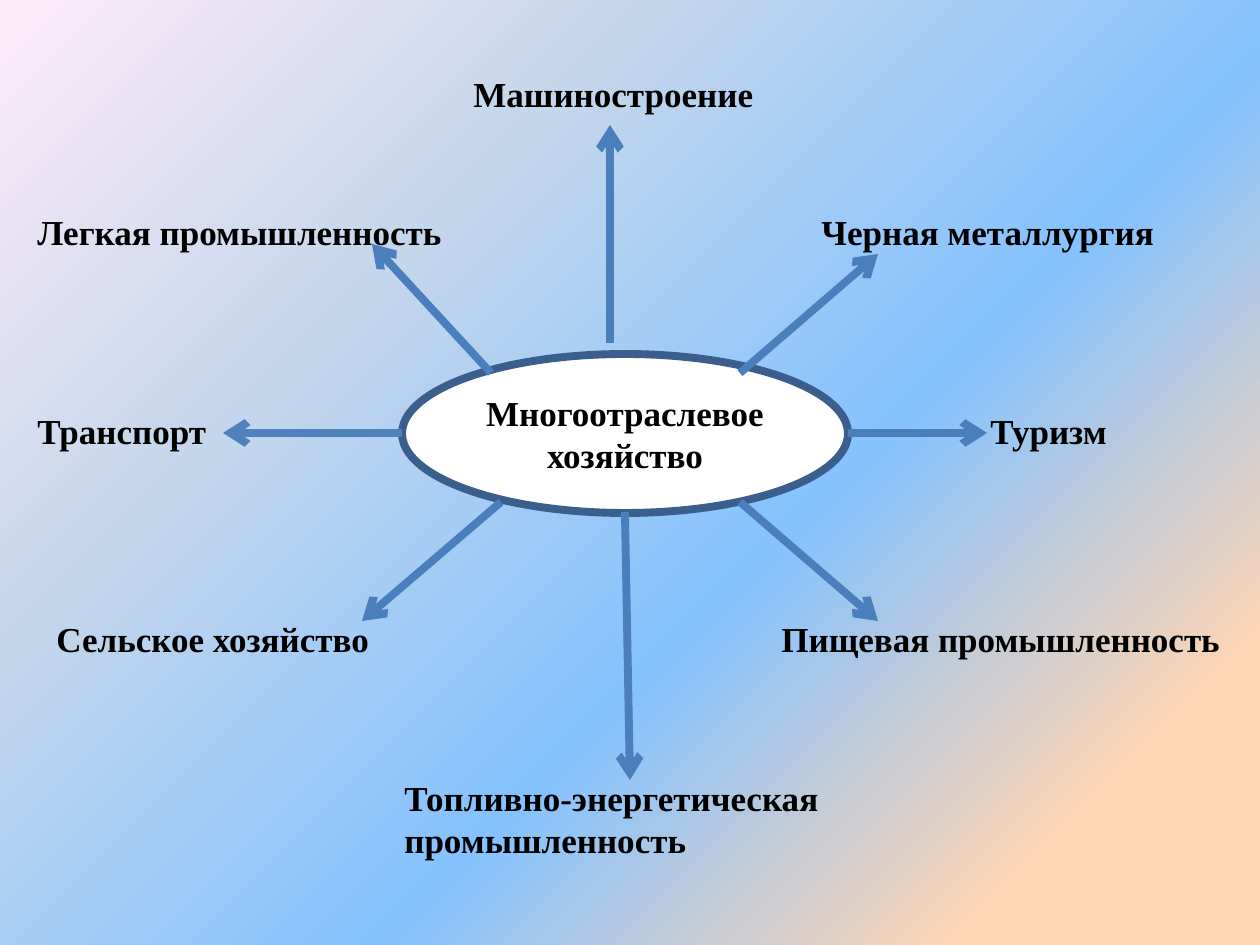
import pptx
import pptx.util
import pptx.oxml
import pptx.oxml.ns
from pptx.dml.color import RGBColor
from pptx.enum.shapes import MSO_CONNECTOR, MSO_SHAPE
from pptx.enum.text import MSO_ANCHOR, MSO_AUTO_SIZE, PP_ALIGN

PX = 914400 // 126
FONT = "Times New Roman"
BLACK = RGBColor(0x00, 0x00, 0x00)
WHITE = RGBColor(0xFF, 0xFF, 0xFF)
OUTLINE = RGBColor(0x3A, 0x5F, 0x8C)
BLUE = RGBColor(0x4B, 0x7E, 0xBC)
LIGHT_BLUE = RGBColor(0x4F, 0x81, 0xBD)
PEACH = RGBColor(0xFC, 0xD5, 0xB5)
SKY = RGBColor(0x85, 0xC2, 0xFF)
PALE_BLUE = RGBColor(0xC4, 0xD6, 0xEB)
PINK = RGBColor(0xFF, 0xEB, 0xFA)

BACKGROUND_STOPS = [(14, PEACH), (40, SKY), (70, PALE_BLUE), (100, PINK)]

# start x, start y, end x, end y, colour
ARROWS = [
    (740, 373, 878, 254, BLUE),
    (610, 343, 610, 125, BLUE),
    (848, 433, 987, 433, BLUE),
    (491, 373, 372, 244, BLUE),
    (740, 502, 878, 621, BLUE),
    (402, 433, 223, 433, LIGHT_BLUE),
    (501, 502, 362, 621, BLUE),
    (625, 512, 630, 780, BLUE),
]

# text, left, top, width, height, wrap
BRANCHES = [
    ("Машиностроение", 461, 66, 316, 55, False),
    ("Топливно-энергетическая промышленность", 392, 770, 630, 97, True),
    ("Черная металлургия", 809, 204, 387, 55, True),
    ("Легкая промышленность", 25, 204, 433, 55, False),
    ("Пищевая промышленность", 769, 611, 467, 55, False),
    ("Сельское хозяйство", 44, 611, 340, 55, False),
    ("Транспорт", 25, 403, 218, 55, True),
    ("Туризм", 978, 403, 208, 55, True),
]


def px(*lengths):
    return [pptx.util.Emu(n * PX) for n in lengths]


def set_background(s, stops):
    """Fill the background with a gradient that spreads from the bottom right corner."""
    s.background.fill.solid()
    solid = s.element.find(".//" + pptx.oxml.ns.qn("p:bgPr"))[0]
    gs = "".join(
        f'<a:gs pos="{pos * 1000}"><a:srgbClr val="{color}"/></a:gs>'
        for pos, color in stops
    )
    gradient = pptx.oxml.parse_xml(
        f'<a:gradFill {pptx.oxml.ns.nsdecls("a")} rotWithShape="1">'
        f'<a:gsLst>{gs}</a:gsLst>'
        '<a:path path="circle"><a:fillToRect l="100000" t="100000"/></a:path>'
        '</a:gradFill>'
    )
    solid.getparent().replace(solid, gradient)


def set_text(tf, text, align=None):
    p = tf.paragraphs[0]
    p.text = text
    p.alignment = align
    p.font.name = FONT
    p.font.size = pptx.util.Pt(20)
    p.font.bold = True
    p.font.color.rgb = BLACK


def add_center(s, text, left, top, width, height):
    sp = s.shapes.add_shape(MSO_SHAPE.OVAL, *px(left, top, width, height))
    sp.shadow.inherit = False
    sp.fill.solid()
    sp.fill.fore_color.rgb = WHITE
    sp.line.color.rgb = OUTLINE
    sp.line.width = pptx.util.Pt(4.5)
    sp.text_frame.vertical_anchor = MSO_ANCHOR.MIDDLE
    set_text(sp.text_frame, text, PP_ALIGN.CENTER)


def add_arrow(s, x1, y1, x2, y2, color):
    arrow = s.shapes.add_connector(MSO_CONNECTOR.STRAIGHT, *px(x1, y1, x2, y2))
    arrow.line.color.rgb = color
    arrow.line.width = pptx.util.Pt(4.5)
    ns = pptx.oxml.ns.nsdecls("a")
    arrow.line._get_or_add_ln().append(
        pptx.oxml.parse_xml(f'<a:tailEnd {ns} type="arrow"/>'))
    arrow._element.spPr.append(pptx.oxml.parse_xml(f"<a:effectLst {ns}/>"))


def add_branch(s, text, left, top, width, height, wrap):
    tf = s.shapes.add_textbox(*px(left, top, width, height)).text_frame
    tf.word_wrap = wrap
    tf.auto_size = MSO_AUTO_SIZE.SHAPE_TO_FIT_TEXT
    set_text(tf, text)


def main():
    prs = pptx.Presentation()
    prs.slide_width = pptx.util.Inches(10)
    prs.slide_height = pptx.util.Inches(7.5)
    s = prs.slides.add_slide(prs.slide_layouts[6])
    set_background(s, BACKGROUND_STOPS)
    add_center(s, "Многоотраслевое хозяйство", 402, 354, 446, 159)
    for arrow in ARROWS:
        add_arrow(s, *arrow)
    for branch in BRANCHES:
        add_branch(s, *branch)
    prs.save("out.pptx")


if __name__ == "__main__":
    main()
